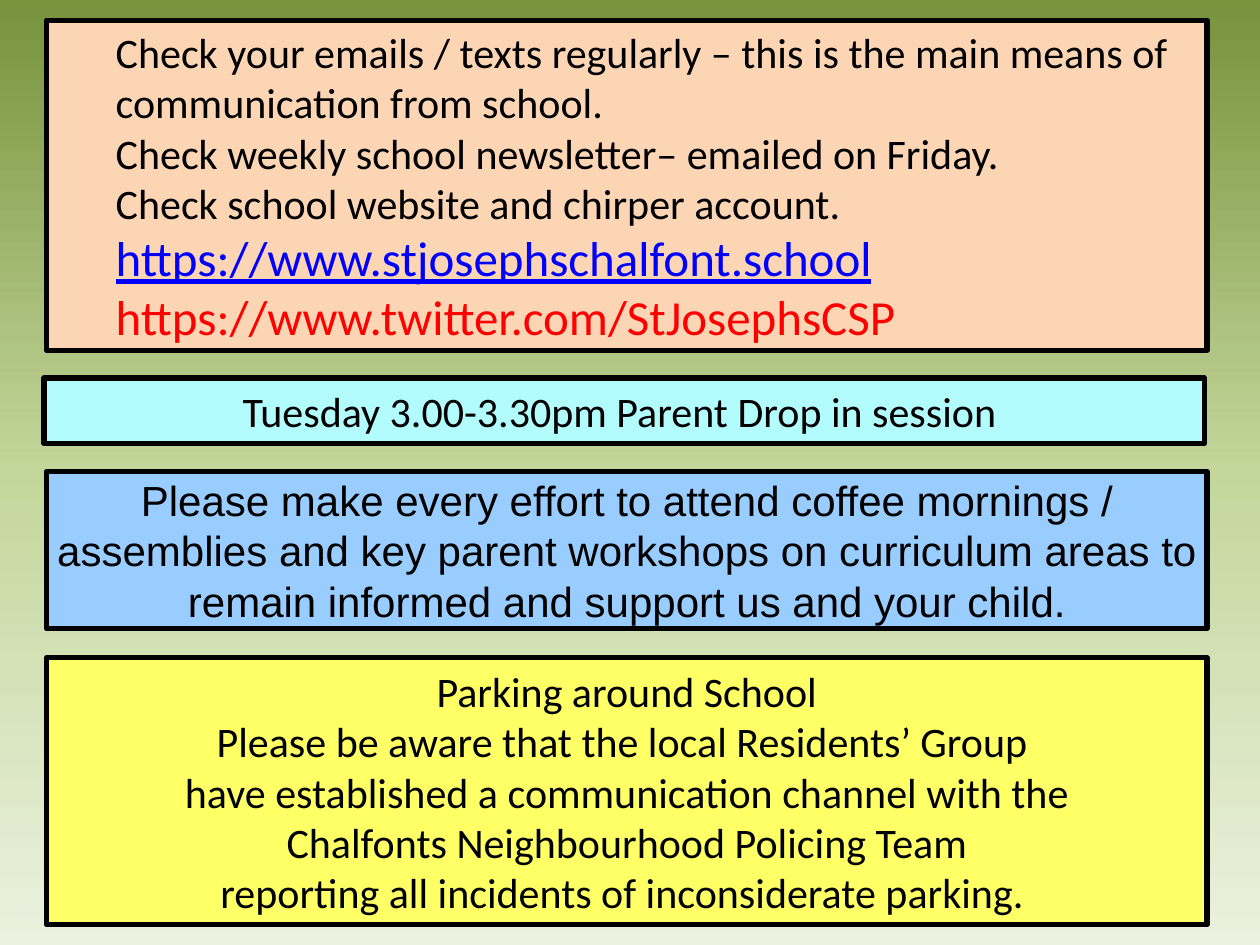
from copy import deepcopy
from dataclasses import dataclass

from pptx import Presentation
from pptx import util as u
from pptx.dml.color import RGBColor
from pptx.enum import shapes, text


@dataclass(frozen=True)
class Theme:
    black: str = "000000"
    peach: str = "FCD5B5"
    aqua: str = "B2FCFE"
    sky: str = "99CCFF"
    yellow: str = "FFFF66"
    link: str = "0000FF"
    red: str = "FF0000"
    back: tuple = ((0, "77933C"), (0.5, "C3D69B"), (1, "EBF1DE"))
    body: int = 24
    large: int = 28
    border: int = 3
    font: str = "Calibri"
    plain: str = "Arial"


def write(para, words, font, size, color, under=False, align=text.PP_ALIGN.LEFT):
    para.alignment = align
    run = para.add_run()
    run.text = words
    run.font.name = font
    run.font.size = u.Pt(size)
    run.font.color.rgb = RGBColor.from_string(color)
    run.font.underline = under


class Board:
    """Draws notice panels on one slide in a shared style."""

    def __init__(self, slide, theme):
        self.slide = slide
        self.theme = theme

    def back(self):
        fill = self.slide.background.fill
        fill.gradient()
        fill.gradient_angle = 270
        first = self.slide.element.xpath(".//a:gsLst/a:gs")[0]
        first.addnext(deepcopy(first))
        for stop, (place, color) in zip(fill.gradient_stops, self.theme.back):
            stop.position = place
            stop.color.rgb = RGBColor.from_string(color)

    def fill(self, frame, lines, **style):
        frame.word_wrap = True
        for i, (words, extra) in enumerate(lines):
            para = frame.add_paragraph() if i else frame.paragraphs[0]
            base = dict(font=self.theme.font, size=self.theme.body, color=self.theme.black)
            write(para, words, **{**base, **style, **extra})

    def panel(self, top, high, color, lines=(), left=0.37, **style):
        box = self.slide.shapes.add_shape(
            shapes.MSO_SHAPE.RECTANGLE,
            u.Inches(left), u.Inches(top), u.Inches(9.21), u.Inches(high))
        box.shadow.inherit = False
        box.fill.solid()
        box.fill.fore_color.rgb = RGBColor.from_string(color)
        box.line.color.rgb = RGBColor.from_string(self.theme.black)
        box.line.width = u.Pt(self.theme.border)
        frame = box.text_frame
        frame.vertical_anchor = text.MSO_ANCHOR.MIDDLE
        frame.margin_left = frame.margin_right = u.Inches(0.04)
        frame.margin_top = frame.margin_bottom = u.Inches(0.04)
        self.fill(frame, [(words, {}) for words in lines],
                  align=text.PP_ALIGN.CENTER, **style)

    def notes(self, left, top, wide, high, lines):
        box = self.slide.shapes.add_textbox(
            u.Inches(left), u.Inches(top), u.Inches(wide), u.Inches(high))
        self.fill(box.text_frame, lines)
        box.text_frame.auto_size = text.MSO_AUTO_SIZE.SHAPE_TO_FIT_TEXT


def main():
    deck = Presentation()
    deck.slide_width, deck.slide_height = u.Inches(10), u.Inches(7.5)
    theme = Theme()
    board = Board(deck.slides.add_slide(deck.slide_layouts[6]), theme)
    board.back()
    board.panel(5.22, 2.12, theme.yellow, [
        "Parking around School",
        "Please be aware that the local Residents’ Group ",
        "have established a communication channel with the",
        " Chalfonts Neighbourhood Policing Team ",
        "reporting all incidents of inconsiderate parking. ",
    ])
    board.panel(0.16, 2.62, theme.peach)
    board.notes(0.82, 0.16, 8.74, 2.66, [
        ("Check your emails / texts regularly – this is the main means of "
         "communication from school.", {}),
        ("Check weekly school newsletter– emailed on Friday.", {}),
        ("Check school website and chirper account.", {}),
        ("https://www.stjosephschalfont.school",
         dict(size=theme.large, color=theme.link, under=True)),
        ("https://www.twitter.com/StJosephsCSP",
         dict(size=theme.large, color=theme.red)),
    ])
    board.panel(3, 0.52, theme.aqua,
                ["Tuesday 3.00-3.30pm Parent Drop in session "], left=0.35)
    board.panel(3.74, 1.25, theme.sky, [
        "Please make every effort to attend coffee mornings / assemblies and key "
        "parent workshops on curriculum areas to remain informed and support us "
        "and your child.",
    ], font=theme.plain)
    deck.save("out.pptx")


if __name__ == "__main__":
    main()
